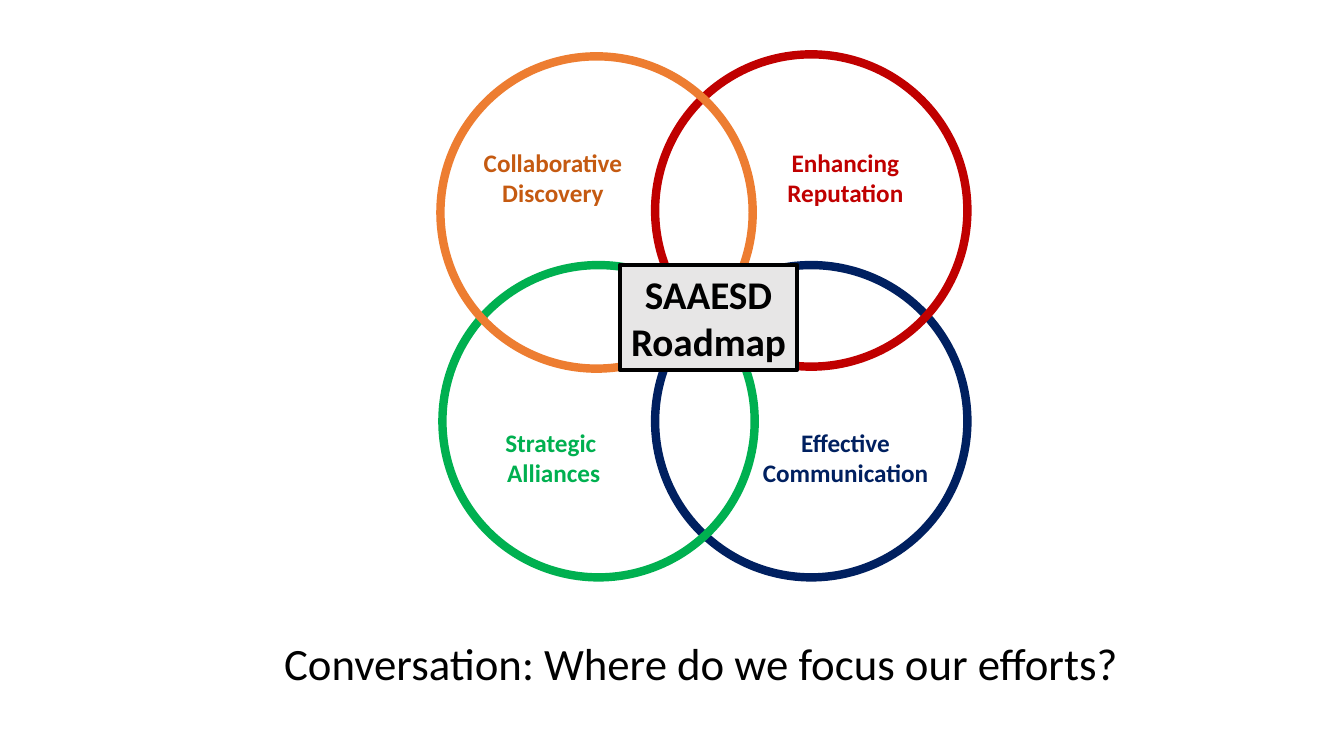
from pptx import Presentation
from pptx.dml.color import RGBColor
from pptx.enum.shapes import MSO_SHAPE
from pptx.enum.text import MSO_ANCHOR, MSO_AUTO_SIZE, PP_ALIGN
from pptx.util import Cm, Pt

ORANGE = RGBColor(0xED, 0x7D, 0x31)
DARK_ORANGE = RGBColor(0xC5, 0x5A, 0x11)
RED = RGBColor(0xC0, 0x00, 0x00)
GREEN = RGBColor(0x00, 0xB0, 0x50)
NAVY = RGBColor(0x00, 0x20, 0x60)
BLACK = RGBColor(0x00, 0x00, 0x00)
GRAY = RGBColor(0xE7, 0xE6, 0xE6)

FONT = "Calibri"
DIAMETER = 7.87
LABEL_HEIGHT = 1.8
TOP_LABEL, BOTTOM_LABEL = 3.58, 10.64
CENTER, LEFT = PP_ALIGN.CENTER, PP_ALIGN.LEFT

LABELS = [
    ("Strategic \nAlliances", 12.47, BOTTOM_LABEL, 2.97, GREEN, CENTER),
    ("Enhancing\nReputation", 19.58, TOP_LABEL, 3.45, RED, CENTER),
    ("Collaborative\nDiscovery", 11.94, TOP_LABEL, 4.04, DARK_ORANGE, LEFT),
    ("Effective\nCommunication", 18.95, BOTTOM_LABEL, 4.72, NAVY, CENTER),
]
CIRCLES = [
    (16.51, 6.68, NAVY),
    (16.51, 1.37, RED),
    (11.15, 6.68, GREEN),
    (11.1, 1.42, ORANGE),
]


def write_text(sp, text, size, color, bold=True, first_align=CENTER):
    tf = sp.text_frame
    tf.text = text
    tf.word_wrap = False
    tf.auto_size = MSO_AUTO_SIZE.SHAPE_TO_FIT_TEXT
    for i, p in enumerate(tf.paragraphs):
        p.alignment = CENTER if i else first_align
        for r in p.runs:
            r.font.name = FONT
            r.font.size = Pt(size)
            r.font.bold = bold
            r.font.color.rgb = color


def add_label(s, text, left, top, width, color, first_align):
    sp = s.shapes.add_textbox(Cm(left), Cm(top), Cm(width), Cm(LABEL_HEIGHT))
    write_text(sp, text, 18, color, first_align=first_align)


def add_circle(s, left, top, color):
    sp = s.shapes.add_shape(MSO_SHAPE.OVAL, Cm(left), Cm(top), Cm(DIAMETER), Cm(DIAMETER))
    sp.shadow.inherit = False
    sp.fill.background()
    sp.line.color.rgb = color
    sp.line.width = Pt(6)


def add_center_box(s, text):
    sp = s.shapes.add_shape(MSO_SHAPE.RECTANGLE, Cm(15.62), Cm(6.68), Cm(4.47), Cm(2.64))
    sp.shadow.inherit = False
    sp.fill.solid()
    sp.fill.fore_color.rgb = GRAY
    sp.line.color.rgb = BLACK
    sp.line.width = Pt(3)
    write_text(sp, text, 28, BLACK)
    sp.text_frame.vertical_anchor = MSO_ANCHOR.TOP


def add_question(s, text):
    sp = s.shapes.add_textbox(Cm(6.91), Cm(15.9), Cm(21.77), Cm(1.63))
    write_text(sp, text, 32, BLACK, bold=False, first_align=LEFT)


def main():
    prs = Presentation()
    prs.slide_width = Cm(33.87)
    prs.slide_height = Cm(19.05)
    s = prs.slides.add_slide(prs.slide_layouts[6])
    for label in LABELS:
        add_label(s, *label)
    for circle in CIRCLES:
        add_circle(s, *circle)
    add_center_box(s, "SAAESD\nRoadmap")
    add_question(s, "Conversation: Where do we focus our efforts?")
    prs.save("out.pptx")


if __name__ == "__main__":
    main()
